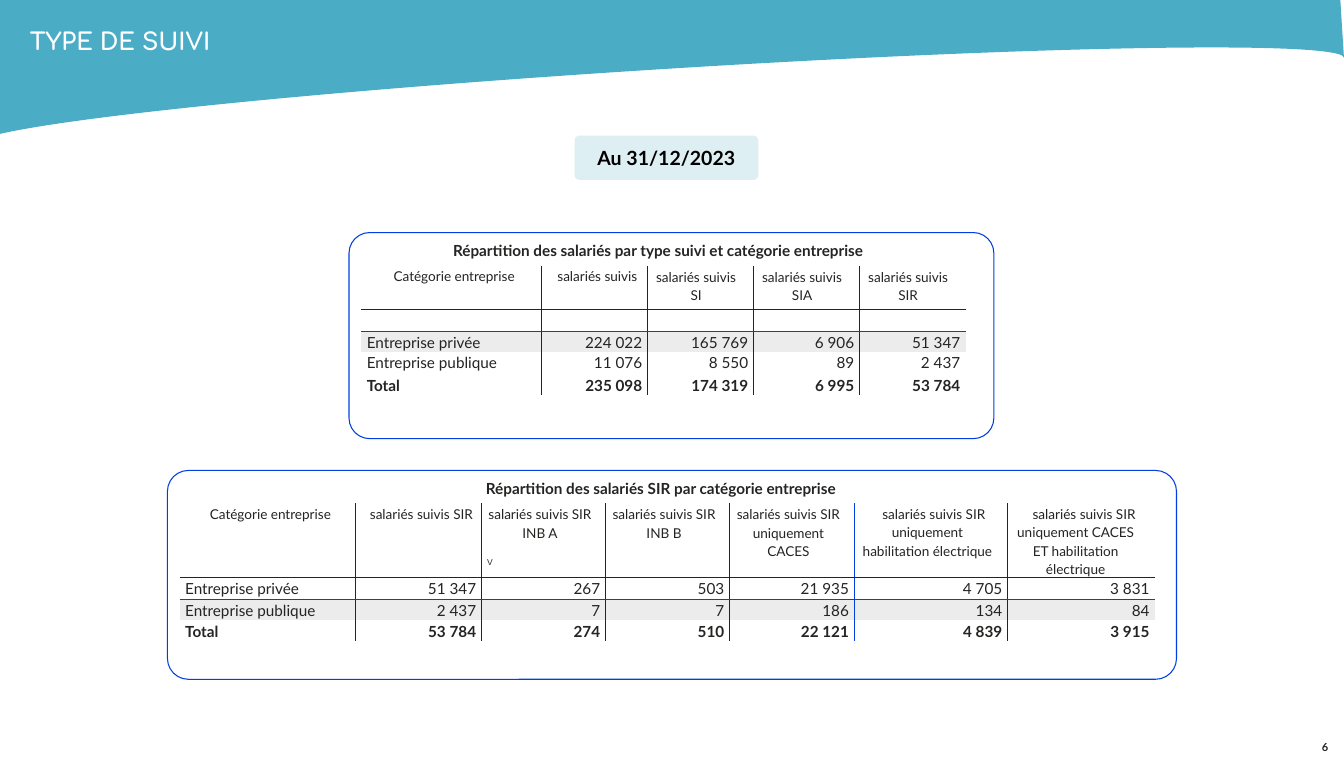
from dataclasses import dataclass

import lxml.etree
import pptx
import pptx.dml.color
import pptx.enum.shapes
import pptx.enum.text
import pptx.oxml.ns
import pptx.util

RGBColor = pptx.dml.color.RGBColor
ALIGN = pptx.enum.text.PP_ALIGN
SHAPE = pptx.enum.shapes.MSO_SHAPE
qn = pptx.oxml.ns.qn

TEAL = RGBColor(0x4B, 0xAC, 0xC6)
PALE_TEAL = RGBColor(0x93, 0xCD, 0xDD)
BLUE = RGBColor(0x00, 0x3F, 0xE2)
INK = RGBColor(0x25, 0x24, 0x23)
BLACK = RGBColor(0x00, 0x00, 0x00)
WHITE = RGBColor(0xFF, 0xFF, 0xFF)
BAND = RGBColor(0xED, 0xEC, 0xEC)

SLIDE_WIDTH = pptx.util.Pt(1583)
SLIDE_HEIGHT = pptx.util.Pt(903)
CELL_INDENT = pptx.util.Inches(0.09)
NO_STYLE = "{2D5ABB26-0587-4C30-8999-92F81FD0307C}"


@dataclass
class Box:
    """Place and size in percent of the slide."""
    left: float
    top: float
    width: float
    height: float

    def emu(self) -> tuple[int, int, int, int]:
        return across(self.left), down(self.top), across(self.width), down(self.height)


@dataclass
class Heading:
    single: str = ""
    wrapped: str = ""
    mark: str = ""
    wrap_indent: float = 0.21


@dataclass
class Panel:
    frame: Box
    caption: str
    caption_box: Box
    table_left: float
    table_top: float
    columns: list[float]
    rows: list[float]
    headings: list[Heading]
    body: list[list[str]]
    band_row: int
    blue_row: int
    blue_column: int | None = None


def across(percent: float) -> int:
    return round(SLIDE_WIDTH * percent / 100)


def down(percent: float) -> int:
    return round(SLIDE_HEIGHT * percent / 100)


def style(paragraph, size: float, color: RGBColor = INK, bold: bool = False,
          face: str = "Lato") -> None:
    font = paragraph.font
    font.name, font.size, font.bold = face, pptx.util.Pt(size), bold
    font.color.rgb = color


def add_label(slide, box: Box, text: str, size: float, margin: float = 0) -> None:
    frame = slide.shapes.add_textbox(*box.emu()).text_frame
    frame.margin_left = pptx.util.Inches(margin)
    frame.margin_right = frame.margin_bottom = 0
    frame.margin_top = pptx.util.Inches(0.02)
    frame.text = text
    style(frame.paragraphs[0], size, bold=True)


def add_panel_shape(slide, kind, box: Box, fill: RGBColor | None,
                    line: RGBColor | None):
    shape = slide.shapes.add_shape(kind, *box.emu())
    shape.shadow.inherit = False
    if fill is None:
        shape.fill.background()
    else:
        shape.fill.solid()
        shape.fill.fore_color.rgb = fill
    if line is None:
        shape.line.fill.background()
    else:
        shape.line.color.rgb = line
        shape.line.width = pptx.util.Pt(1.25)
    if kind == SHAPE.ROUNDED_RECTANGLE:
        shape.adjustments[0] = 0.1
    return shape


def add_border(cell, side: str, color: RGBColor) -> None:
    line = lxml.etree.SubElement(cell._tc.get_or_add_tcPr(), qn(f"a:{side}"),
                                 w=str(pptx.util.Pt(1.5)))
    fill = lxml.etree.SubElement(line, qn("a:solidFill"))
    lxml.etree.SubElement(fill, qn("a:srgbClr"), val=str(color))


def indent(paragraph, left: int, right: int) -> None:
    properties = paragraph._p.get_or_add_pPr()
    properties.set("marL", str(left))
    properties.set("marR", str(right))


def fill_heading(cell, heading: Heading) -> None:
    frame = cell.text_frame
    cell.margin_top = pptx.util.Inches(0.04 if heading.single else 0.01)
    texts = [text for text in (heading.single, heading.wrapped, heading.mark) if text]
    frame.text = "\n".join(texts)
    for text, paragraph in zip(texts, frame.paragraphs):
        if text == heading.mark:
            indent(paragraph, CELL_INDENT, 0)
            paragraph.space_before = pptx.util.Pt(20)
            style(paragraph, 10, face="Arial")
            continue
        paragraph.alignment = ALIGN.CENTER
        is_wrapped = text == heading.wrapped
        indent(paragraph, CELL_INDENT,
               pptx.util.Inches(heading.wrap_indent) if is_wrapped else 0)
        if is_wrapped:
            paragraph.line_spacing = 1.14
        style(paragraph, 16)


def fill_value(cell, text: str, is_label: bool, is_last_row: bool) -> None:
    cell.margin_top = pptx.util.Inches(0.03 if text else 0)
    cell.text = text
    paragraphs = cell.text_frame.paragraphs
    for position, paragraph in enumerate(paragraphs):
        paragraph.alignment = ALIGN.LEFT if is_label else ALIGN.RIGHT
        indent(paragraph, CELL_INDENT, CELL_INDENT)
        if position:
            paragraph.space_before = pptx.util.Pt(4.9)
        style(paragraph, 18, bold=is_last_row and position == len(paragraphs) - 1)


def add_panel(slide, panel: Panel) -> None:
    add_panel_shape(slide, SHAPE.ROUNDED_RECTANGLE, panel.frame, None, BLUE)
    add_label(slide, panel.caption_box, panel.caption, 18, 0.01)

    area = Box(panel.table_left, panel.table_top, sum(panel.columns), sum(panel.rows))
    table = slide.shapes.add_table(len(panel.rows), len(panel.columns), *area.emu()).table
    table.first_row = table.horz_banding = False
    table._tbl.tblPr.find(qn("a:tableStyleId")).text = NO_STYLE
    for column, width in zip(table.columns, panel.columns):
        column.width = across(width)
    for row, height in zip(table.rows, panel.rows):
        row.height = down(height)

    last_row, last_column = len(panel.rows) - 1, len(panel.columns) - 1
    for r in range(last_row + 1):
        for c in range(last_column + 1):
            cell = table.cell(r, c)
            cell.margin_left = cell.margin_right = cell.margin_bottom = 0
            if r == 0:
                fill_heading(cell, panel.headings[c])
            else:
                fill_value(cell, panel.body[r - 1][c], c == 0, r == last_row)
            if c < last_column:
                add_border(cell, "lnR", BLUE if c == panel.blue_column else INK)
            if r in (0, panel.blue_row):
                add_border(cell, "lnB", BLUE if r == panel.blue_row else INK)
            if r == panel.band_row:
                cell.fill.solid()
                cell.fill.fore_color.rgb = BAND
            else:
                cell.fill.background()


FOLLOW_UP = Panel(
    Box(25.97, 30.32, 47.98, 26.87),
    "Répartition des salariés par type suivi et catégorie entreprise",
    Box(33.67, 31.34, 32.74, 2.63), 26.88, 34.69,
    [13.42] + [7.89] * 4, [5.7, 2.79, 2.71, 5.5],
    [Heading("Catégorie entreprise"), Heading("salariés suivis")]
    + [Heading(wrapped=f"salariés suivis {kind}", wrap_indent=0.24)
       for kind in ("SI", "SIA", "SIR")],
    [[""] * 5,
     ["Entreprise privée", "224 022", "165 769", "6 906", "51 347"],
     ["Entreprise publique\nTotal", "11 076\n235 098", "8 550\n174 319",
      "89\n6 995", "2 437\n53 784"]],
    band_row=2, blue_row=1)

REINFORCED = Panel(
    Box(12.46, 61.34, 75.08, 27.23),
    "Répartition des salariés SIR par catégorie entreprise",
    Box(36.11, 62.28, 27.92, 2.63), 13.37, 65.63,
    [13.1, 9.37, 9.23, 9.23, 9.28, 11.41, 10.96], [9.67, 2.79, 2.75, 2.75],
    [Heading("Catégorie entreprise"), Heading("salariés suivis SIR"),
     Heading(wrapped="salariés suivis SIR INB A", mark="V"),
     Heading(wrapped="salariés suivis SIR INB B"),
     Heading(wrapped="salariés suivis SIR uniquement CACES"),
     Heading("salariés suivis SIR", "uniquement habilitation électrique"),
     Heading("salariés suivis SIR", "uniquement CACES ET habilitation électrique",
             wrap_indent=0.28)],
    [["Entreprise privée", "51 347", "267", "503", "21 935", "4 705", "3 831"],
     ["Entreprise publique", "2 437", "7", "7", "186", "134", "84"],
     ["Total", "53 784", "274", "510", "22 121", "4 839", "3 915"]],
    band_row=2, blue_row=1, blue_column=4)


def main() -> None:
    deck = pptx.Presentation()
    deck.slide_width, deck.slide_height = SLIDE_WIDTH, SLIDE_HEIGHT
    slide = deck.slides.add_slide(deck.slide_layouts[5])

    # Curved header, kept behind the title
    header = add_panel_shape(slide, SHAPE.FLOWCHART_STORED_DATA,
                             Box(41.66, -88.52, 14.01, 178.79), TEAL, None)
    header.rotation = 86.4
    slide.shapes._spTree.insert(2, header._element)

    # Title
    title = slide.shapes.title
    title.left, title.top, title.width, title.height = Box(1.27, 1.75, 56.62, 5.82).emu()
    heading = title.text_frame
    heading.text = "TYPE DE SUIVI"
    heading.auto_size = pptx.enum.text.MSO_AUTO_SIZE.NONE
    heading.vertical_anchor = pptx.enum.text.MSO_ANCHOR.BOTTOM
    heading.margin_left = pptx.util.Inches(0.21)
    heading.paragraphs[0].alignment = ALIGN.LEFT
    style(heading.paragraphs[0], 28, WHITE, True, "Comfortaa")

    # Date badge
    badge = add_panel_shape(slide, SHAPE.ROUNDED_RECTANGLE,
                            Box(42.75, 17.7, 13.67, 5.74), PALE_TEAL, None)
    tint = badge._element.spPr.find(qn("a:solidFill"))[0]
    lxml.etree.SubElement(tint, qn("a:alpha"), val="30000")
    badge.text_frame.text = "Au 31/12/2023"
    badge.text_frame.paragraphs[0].alignment = ALIGN.CENTER
    style(badge.text_frame.paragraphs[0], 23, BLACK, True)

    # Framed tables
    for panel in (FOLLOW_UP, REINFORCED):
        add_panel(slide, panel)

    # Page number
    add_label(slide, Box(98.18, 96.37, 1.41, 2.15), "6", 13, 0.04)
    deck.save("out.pptx")


if __name__ == "__main__":
    main()
